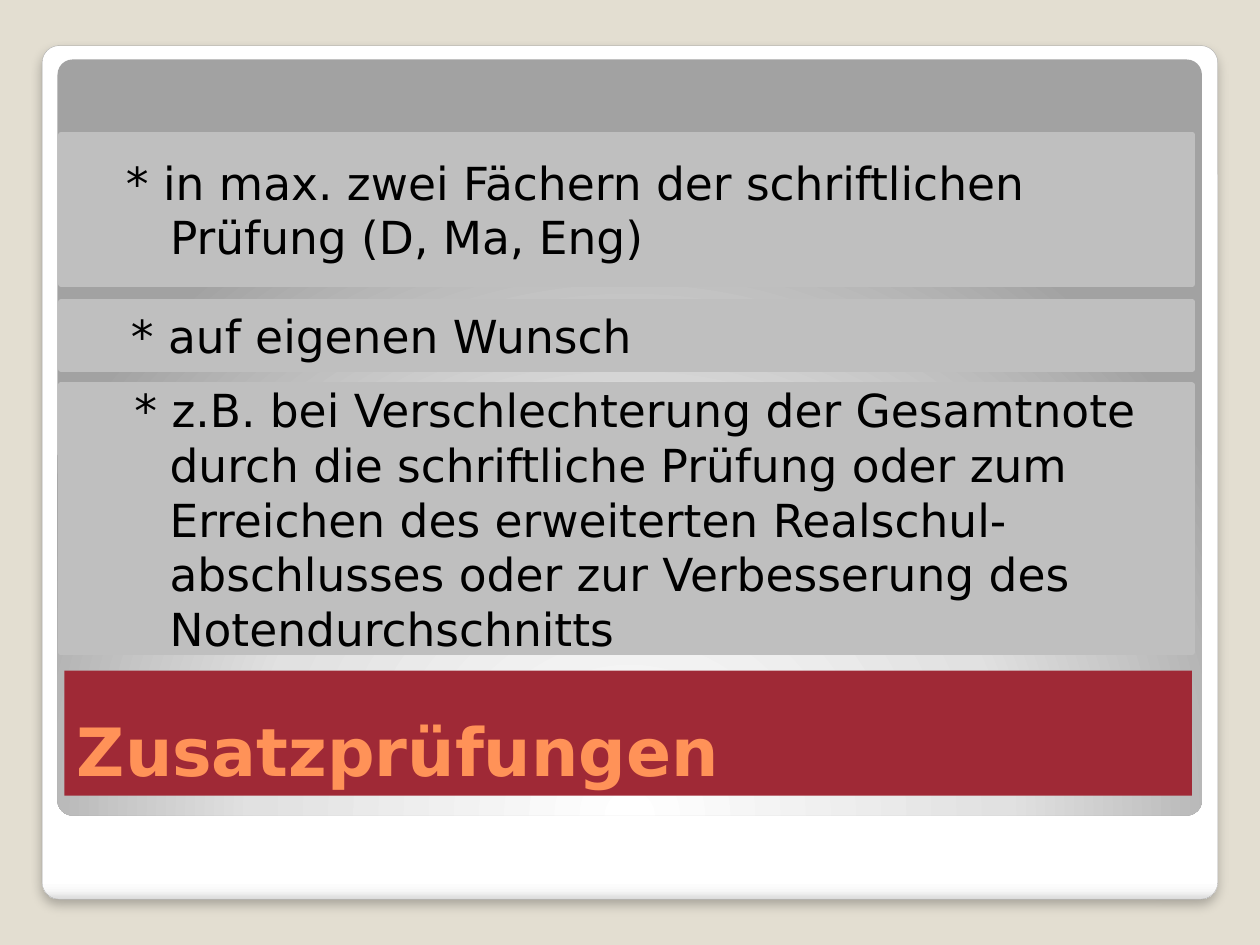
from lxml import etree
from pptx import Presentation
from pptx.dml.color import RGBColor
from pptx.enum.shapes import MSO_SHAPE
from pptx.enum.text import MSO_ANCHOR, PP_ALIGN
from pptx.oxml import parse_xml
from pptx.oxml.ns import nsdecls, qn
from pptx.util import Cm, Pt

RECT = MSO_SHAPE.RECTANGLE
ROUNDED = MSO_SHAPE.ROUNDED_RECTANGLE
MIDDLE = MSO_ANCHOR.MIDDLE
BOTTOM = MSO_ANCHOR.BOTTOM
LEFT = PP_ALIGN.LEFT

BEIGE = RGBColor(0xE3, 0xDE, 0xD1)
EDGE = RGBColor(0xA4, 0xA4, 0xA4)
SILVER = RGBColor(0xBF, 0xBF, 0xBF)
RED = RGBColor(0x9F, 0x29, 0x36)
ORANGE = RGBColor(0xFF, 0x92, 0x58)
BLACK = RGBColor(0, 0, 0)

FRAME_STOPS = [(0, "FFFFFF"), (98, "FFFFFF"), (99, "F7F7F7"), (100, "DADADA")]
PANEL_STOPS = [(0, "FFFFFF"), (55, "E1E1E1"), (100, "A2A2A2")]
DOWNWARD = '<a:lin ang="5400000" scaled="0"/>'
FROM_BELOW = ('<a:path path="circle"><a:fillToRect l="50000" t="175000" '
              'r="50000" b="-75000"/></a:path>')


class SlideBuilder:
    font = "DejaVu Sans"
    hanging = Cm(1.95)

    def __init__(self, prs):
        self.slide = prs.slides.add_slide(prs.slide_layouts[6])
        fill = self.slide.background.fill
        fill.solid()
        fill.fore_color.rgb = BEIGE

    def shape(self, kind, box, line=None, width=0):
        s = self.slide.shapes.add_shape(kind, *map(Cm, box))
        s.shadow.inherit = False
        if line is None:
            s.line.fill.background()
        else:
            s.line.color.rgb = line
            s.line.width = Pt(width)
        return s

    def gradient_panel(self, box, stops, direction, line=None, width=0):
        s = self.shape(ROUNDED, box, line, width)
        s.adjustments[0] = 0.02
        gs = "".join(f'<a:gs pos="{pos * 1000}"><a:srgbClr val="{color}"/></a:gs>'
                     for pos, color in stops)
        s.element.spPr.find(qn("a:prstGeom")).addnext(parse_xml(
            f'<a:gradFill {nsdecls("a")} rotWithShape="1">'
            f'<a:gsLst>{gs}</a:gsLst>{direction}</a:gradFill>'))
        return s

    def drop_shadow(self, s, blur, distance, alpha):
        effects = s.element.spPr.find(qn("a:effectLst"))
        shadow = etree.SubElement(effects, qn("a:outerShdw"), blurRad=str(Pt(blur)),
                                  dist=str(Pt(distance)), dir="5400000",
                                  algn="t", rotWithShape="0")
        color = etree.SubElement(shadow, qn("a:srgbClr"), val="000000")
        etree.SubElement(color, qn("a:alpha"), val=str(alpha * 1000))

    def text_box(self, box, text, fill, color, size, anchor, line=None, width=0):
        s = self.shape(RECT, box, line, width)
        s.fill.solid()
        s.fill.fore_color.rgb = fill
        tf = s.text_frame
        tf.word_wrap = True
        tf.vertical_anchor = anchor
        p = tf.paragraphs[0]
        p.text = text
        p.alignment = LEFT
        p.font.name = self.font
        p.font.size = Pt(size)
        p.font.color.rgb = color
        return p

    def title(self, box, text):
        p = self.text_box(box, text, RED, ORANGE, 38, BOTTOM)
        p.font.bold = True

    def point(self, box, first, lines):
        p = self.text_box(box, "\v".join(lines), SILVER, BLACK, 26, MIDDLE,
                          SILVER, 3.35)
        pPr = p._p.get_or_add_pPr()
        pPr.set("marL", str(self.hanging))
        pPr.set("indent", str(Cm(first) - self.hanging))


def main():
    prs = Presentation()
    prs.slide_width, prs.slide_height = Cm(25.4), Cm(19.05)
    b = SlideBuilder(prs)

    frame = b.gradient_panel((0.85, 0.92, 23.7, 17.21), FRAME_STOPS, DOWNWARD,
                             EDGE, 0.16)
    b.drop_shadow(frame, 6, 4, 25)
    b.gradient_panel((1.16, 1.2, 23.07, 15.24), PANEL_STOPS, FROM_BELOW)

    b.title((1.3, 13.52, 22.73, 2.52), "Zusatzprüfungen")
    b.point((1.23, 6.09, 22.81, 1.35), 1.16, ["* auf eigenen Wunsch"])
    b.point((1.23, 2.72, 22.81, 3), 1.06, [
        "* in max. zwei Fächern der schriftlichen",
        "Prüfung (D, Ma, Eng)"])
    b.point((1.22, 7.77, 22.81, 5.38), 1.24, [
        "* z.B. bei Verschlechterung der Gesamtnote",
        "durch die schriftliche Prüfung oder zum",
        "Erreichen des erweiterten Realschul-",
        "abschlusses oder zur Verbesserung des",
        "Notendurchschnitts"])
    prs.save("out.pptx")


if __name__ == "__main__":
    main()
